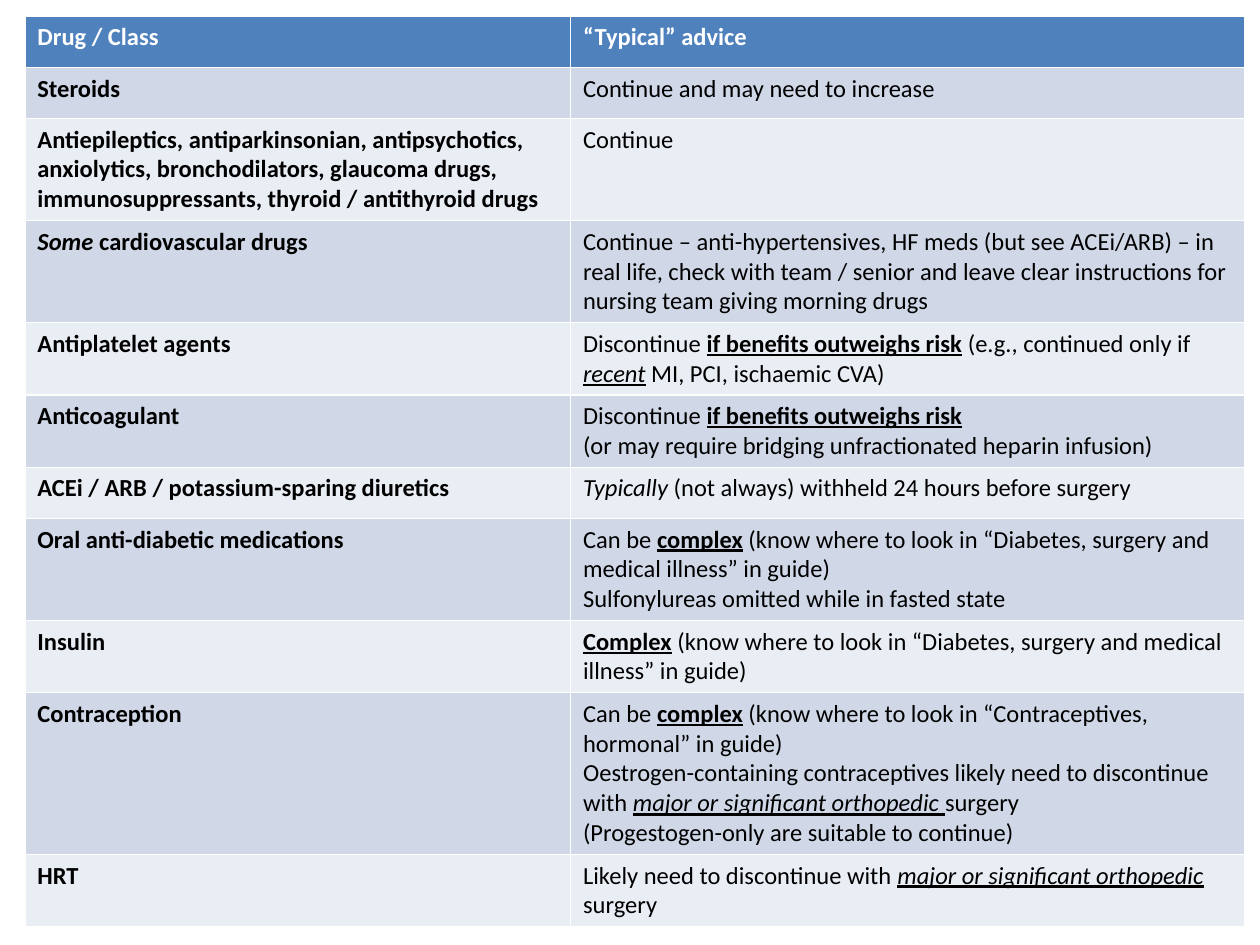
from dataclasses import dataclass

from pptx import Presentation
from pptx.dml.color import RGBColor
from pptx.table import _Cell
from pptx.util import Cm, Pt

HEADER_BLUE = RGBColor(0x4F, 0x81, 0xBD)
BAND_DARK = RGBColor(0xD0, 0xD8, 0xE8)
BAND_LIGHT = RGBColor(0xE9, 0xED, 0xF4)
WHITE = RGBColor(0xFF, 0xFF, 0xFF)
BLACK = RGBColor(0x00, 0x00, 0x00)

COLUMN_WIDTHS = (Cm(11), Cm(13.6))
ROW_HEIGHT = Cm(1.03)
BASE_FORMAT = {"name": "Calibri", "size": Pt(14), "bold": False, "italic": False, "underline": False}


@dataclass(frozen=True)
class Span:
    text: str
    bold: bool = False
    italic: bool = False
    underline: bool = False


Paragraph = tuple[Span, ...]


@dataclass(frozen=True)
class Advice:
    drug: Paragraph
    paragraphs: tuple[Paragraph, ...]


def plain(text: str) -> Span:
    return Span(text)


def strong(text: str) -> Span:
    return Span(text, bold=True)


def key(text: str) -> Span:
    return Span(text, bold=True, underline=True)


def stressed(text: str) -> Span:
    return Span(text, italic=True, underline=True)


IF_BENEFITS = (plain("Discontinue "), key("if benefits outweighs risk"))
MAJOR_SURGERY = (
    stressed("major or significant orthopedic"),
    Span(" ", underline=True),
    plain("surgery"),
)
DIABETES_SECTION = plain(" (know where to look in “Diabetes, surgery and medical illness” in guide)")

HEADER = Advice((strong("Drug / Class"),), ((strong("“Typical” advice"),),))
ADVICE = (
    Advice((strong("Steroids"),), ((plain("Continue and may need to increase"),),)),
    Advice(
        (strong("Antiepileptics, antiparkinsonian, antipsychotics, anxiolytics, bronchodilators, "
                "glaucoma drugs, immunosuppressants, thyroid / antithyroid drugs"),),
        ((plain("Continue"),),),
    ),
    Advice(
        (Span("Some", bold=True, italic=True), strong(" cardiovascular drugs")),
        ((plain("Continue – anti-hypertensives, HF meds (but see ACEi/ARB) – in real life, check with "
                "team / senior and leave clear instructions for nursing team giving morning drugs"),),),
    ),
    Advice(
        (strong("Antiplatelet agents"),),
        ((*IF_BENEFITS, strong(" "), plain("(e.g., continued only if "), stressed("recent"),
          plain(" MI, PCI, ischaemic CVA)")),),
    ),
    Advice(
        (strong("Anticoagulant"),),
        (IF_BENEFITS, (plain("(or may require bridging unfractionated heparin infusion)"),)),
    ),
    Advice(
        (strong("ACEi / ARB / potassium-sparing diuretics"),),
        ((Span("Typically", italic=True), plain(" (not always) withheld 24 hours before surgery")),),
    ),
    Advice(
        (strong("Oral anti-diabetic medications"),),
        ((plain("Can be "), key("complex"), DIABETES_SECTION),
         (plain("Sulfonylureas omitted while in fasted state"),)),
    ),
    Advice((strong("Insulin"),), ((key("Complex"), DIABETES_SECTION),)),
    Advice(
        (strong("Contraception"),),
        ((plain("Can be "), key("complex"),
          plain(" (know where to look in “Contraceptives, hormonal” in guide)")),
         (plain("Oestrogen-containing contraceptives likely need to discontinue with "), *MAJOR_SURGERY),
         (plain("(Progestogen-only are suitable to continue)"),)),
    ),
    Advice((strong("HRT"),), ((plain("Likely need to discontinue with "), *MAJOR_SURGERY),)),
)


def fill_cell(cell: _Cell, paragraphs: tuple[Paragraph, ...], fill: RGBColor, color: RGBColor) -> None:
    cell.fill.solid()
    cell.fill.fore_color.rgb = fill
    frame = cell.text_frame
    for index, spans in enumerate(paragraphs):
        paragraph = frame.add_paragraph() if index else frame.paragraphs[0]
        for span in spans:
            run = paragraph.add_run()
            run.text = span.text
            run.font.color.rgb = color
            style = {"bold": span.bold, "italic": span.italic, "underline": span.underline}
            for attribute, value in (BASE_FORMAT | style).items():
                setattr(run.font, attribute, value)


def main() -> None:
    """Build the slide of advice on regular drugs before surgery."""
    presentation = Presentation()
    presentation.slide_width, presentation.slide_height = Cm(25.4), Cm(19.05)
    slide = presentation.slides.add_slide(presentation.slide_layouts[6])
    rows = (HEADER, *ADVICE)
    table = slide.shapes.add_table(
        len(rows), len(COLUMN_WIDTHS), Cm(0.5), Cm(0.33), sum(COLUMN_WIDTHS), ROW_HEIGHT * len(rows)
    ).table
    for column, width in zip(table.columns, COLUMN_WIDTHS):
        column.width = width
    for index, advice in enumerate(rows):
        table.rows[index].height = ROW_HEIGHT
        band = BAND_DARK if index % 2 else BAND_LIGHT
        fill, color = (band, BLACK) if index else (HEADER_BLUE, WHITE)
        fill_cell(table.cell(index, 0), (advice.drug,), fill, color)
        fill_cell(table.cell(index, 1), advice.paragraphs, fill, color)
    presentation.save("out.pptx")


if __name__ == "__main__":
    main()
